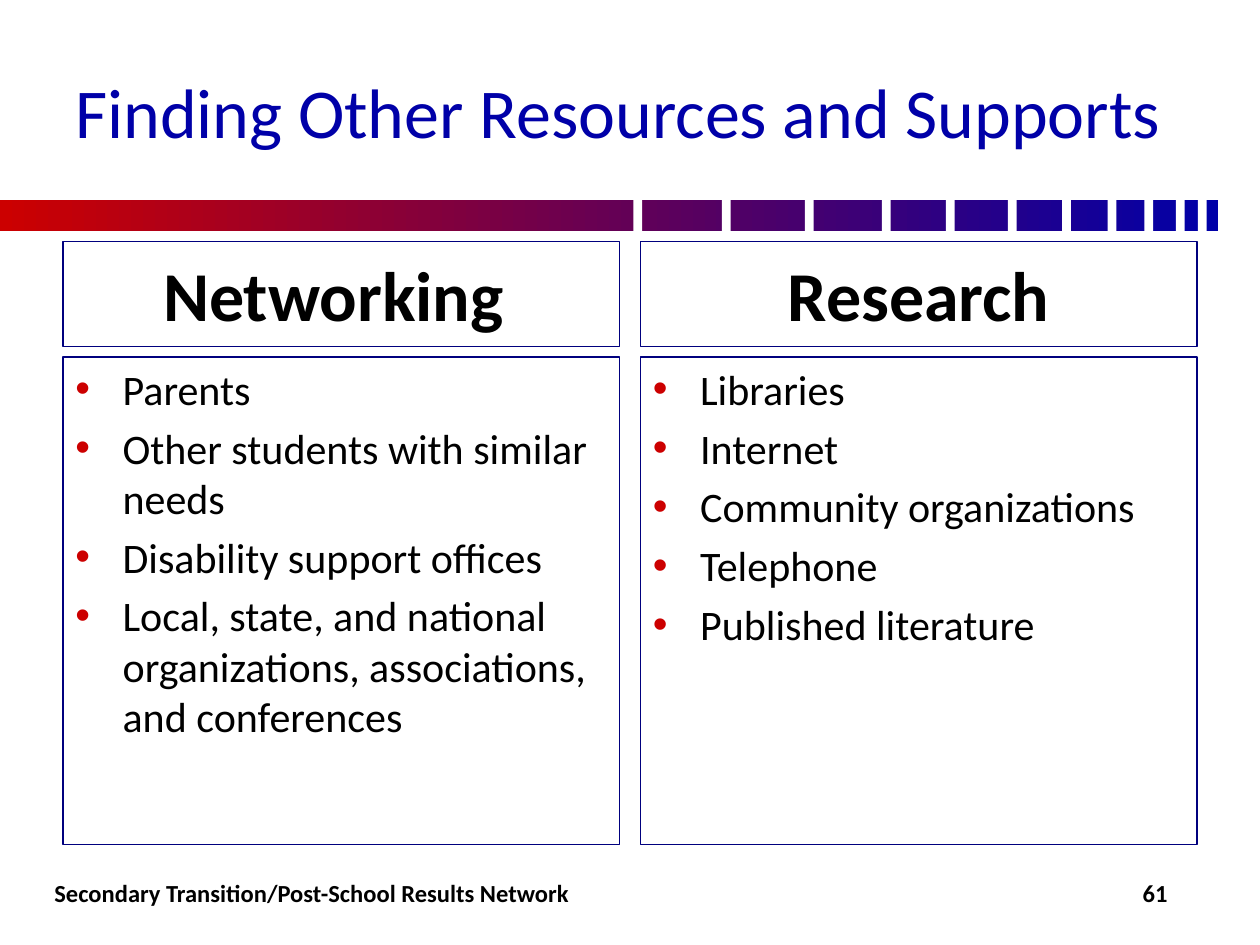
from lxml import etree
from pptx import Presentation
from pptx.dml.color import RGBColor
from pptx.enum.shapes import MSO_SHAPE
from pptx.enum.text import MSO_ANCHOR, PP_ALIGN
from pptx.oxml.ns import qn
from pptx.util import Pt

RECTANGLE = MSO_SHAPE.RECTANGLE
MIDDLE, TOP = MSO_ANCHOR.MIDDLE, MSO_ANCHOR.TOP
LEFT, CENTER = PP_ALIGN.LEFT, PP_ALIGN.CENTER

BLUE, RED, NAVY, BLACK, WHITE = "0000A8", "CC0000", "00007E", "000000", "FFFFFF"
STRIPE_TOP, STRIPE_WIDTH, STRIPE_HEIGHT = 114, 696, 18
GAP_WIDTH = 5
GAP_LEFTS = [362, 412.5, 460, 504, 540.5, 576, 607, 633, 654, 672, 684.5]
COLUMN_LEFT, COLUMN_WIDTH, COLUMN_STEP = 36, 318, 330
COLUMNS = [
    ("Networking ", [
        "Parents",
        "Other students with similar needs",
        "Disability support offices",
        "Local, state, and national organizations, associations, and conferences",
    ]),
    ("Research", [
        "Libraries",
        "Internet",
        "Community organizations",
        "Telephone",
        "Published literature",
    ]),
]


def color(value):
    return RGBColor.from_string(value)


def apply(target, values):
    for name, value in values.items():
        setattr(target, name, value)


class SlideBuilder:
    font_name = "Calibri"
    bullet_indent = 27
    spacing_ratio = 0.2

    def __init__(self, slide):
        self.slide = slide

    def rectangle(self, left, top, width, height):
        shape = self.slide.shapes.add_shape(
            RECTANGLE, Pt(left), Pt(top), Pt(width), Pt(height))
        shape.shadow.inherit = False
        return shape

    def block(self, left, top, width, height, fill):
        shape = self.rectangle(left, top, width, height)
        shape.fill.solid()
        shape.fill.fore_color.rgb = color(fill)
        shape.line.fill.background()

    def gradient(self, left, top, width, height, start, end):
        shape = self.rectangle(left, top, width, height)
        shape.fill.gradient()
        shape.fill.gradient_angle = 0
        for stop, position, value in zip(shape.fill.gradient_stops, (0, 1), (start, end)):
            stop.position = position
            stop.color.rgb = color(value)
        shape.line.fill.background()

    def panel(self, left, top, width, height, lines, size, **options):
        shape = self.rectangle(left, top, width, height)
        shape.fill.background()
        shape.line.color.rgb = color(NAVY)
        shape.line.width = Pt(0.75)
        self.fill_text(shape.text_frame, lines, size, **options)

    def label(self, left, top, width, height, text, size, **options):
        shape = self.slide.shapes.add_textbox(Pt(left), Pt(top), Pt(width), Pt(height))
        self.fill_text(shape.text_frame, [text], size, **options)

    def fill_text(self, frame, lines, size, fill=BLACK, bold=False, align=LEFT,
                  anchor=MIDDLE, wrap=True, bullets=False):
        apply(frame, {
            "word_wrap": wrap, "vertical_anchor": anchor,
            "margin_left": Pt(7.2), "margin_right": Pt(7.2),
            "margin_top": Pt(3.6), "margin_bottom": Pt(3.6),
        })
        for index, line in enumerate(lines):
            paragraph = frame.add_paragraph() if index else frame.paragraphs[0]
            paragraph.alignment = align
            if index:
                paragraph.space_before = Pt(size * self.spacing_ratio)
            if bullets:
                self.bullet(paragraph)
            run = paragraph.add_run()
            run.text = line
            apply(run.font, {"name": self.font_name, "size": Pt(size), "bold": bold})
            run.font.color.rgb = color(fill)

    def bullet(self, paragraph):
        properties = paragraph._p.get_or_add_pPr()
        properties.set("marL", str(Pt(self.bullet_indent)))
        properties.set("indent", str(-Pt(self.bullet_indent)))
        bullet_color = etree.SubElement(properties, qn("a:buClr"))
        etree.SubElement(bullet_color, qn("a:srgbClr"), val=RED)
        etree.SubElement(properties, qn("a:buFont"), typeface="Arial")
        etree.SubElement(properties, qn("a:buChar"), char="•")


def main():
    presentation = Presentation()
    apply(presentation, {"slide_width": Pt(720), "slide_height": Pt(540)})
    builder = SlideBuilder(presentation.slides.add_slide(presentation.slide_layouts[6]))

    builder.gradient(0, STRIPE_TOP, STRIPE_WIDTH, STRIPE_HEIGHT, RED, BLUE)
    for left in GAP_LEFTS:
        builder.block(left, STRIPE_TOP, GAP_WIDTH, STRIPE_HEIGHT, WHITE)

    builder.label(36, 18, 648, 90, "Finding Other Resources and Supports", 40, fill=BLUE)

    for index, (heading, items) in enumerate(COLUMNS):
        left = COLUMN_LEFT + index * COLUMN_STEP
        builder.panel(left, 138, COLUMN_WIDTH, 60, [heading], 40, bold=True, align=CENTER)
        builder.panel(left, 204, COLUMN_WIDTH, 278.5, items, 24, anchor=TOP, bullets=True)

    builder.label(630, 492, 60, 36, "61", 14, bold=True, align=CENTER, wrap=False)
    builder.label(24, 492, 330, 36, "Secondary Transition/Post-School Results Network", 14,
                  bold=True, wrap=False)

    presentation.save("out.pptx")


if __name__ == "__main__":
    main()
